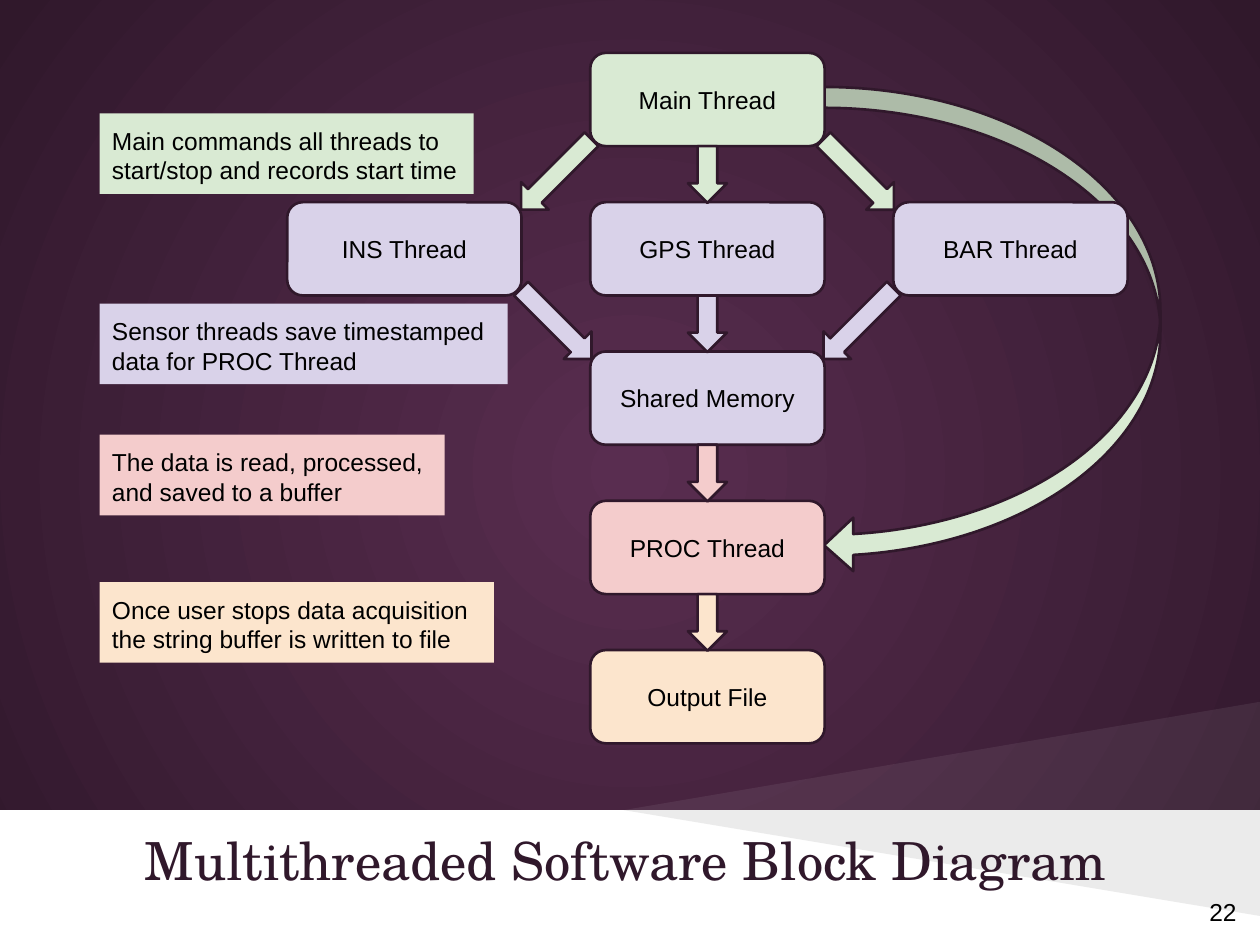
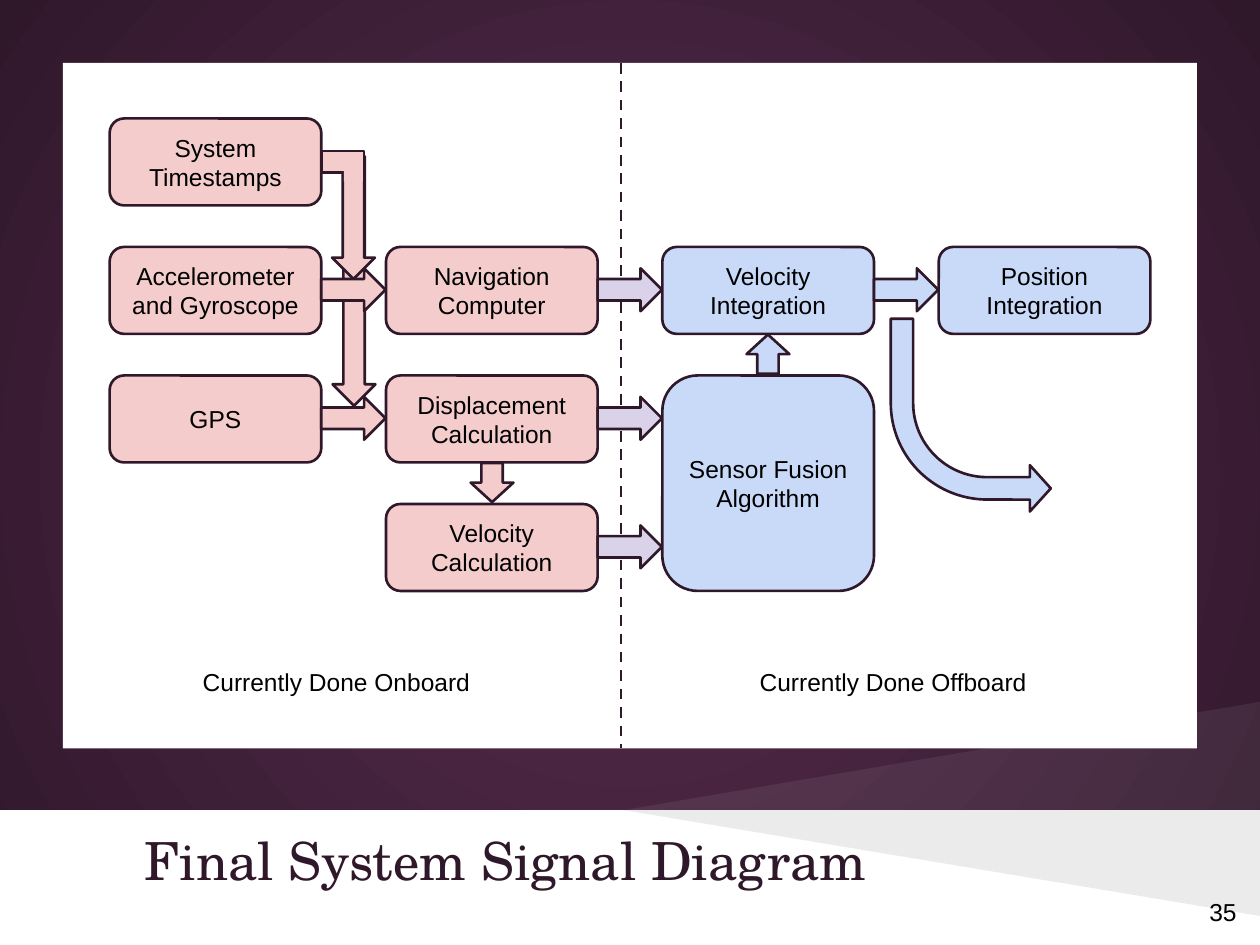
"""Build two slides with the software and signal block diagrams."""
from lxml import etree
from pptx import Presentation
from pptx import util as u
from pptx.dml.color import RGBColor
from pptx.enum import dml, shapes, text
from pptx.oxml.ns import qn

HUES = {
    "plum": "592D50", "dark": "30182B", "white": "FFFFFF", "black": "000000",
    "green": "D9EAD3", "lilac": "D9D2E9", "pink": "F4CCCC",
    "peach": "FCE5CD", "blue": "C9DAF8",
}
KIND = shapes.MSO_SHAPE
ALIGN = text.PP_ALIGN
ANCHOR = text.MSO_ANCHOR
ROUND = [0.167]


def hue(name):
    """Return the named colour."""
    return RGBColor.from_string(HUES[name])


def write(shape, words, size=14, font="Arial", ink="black",
          align=ALIGN.LEFT, anchor=ANCHOR.TOP):
    """Put one styled paragraph into a shape and return it."""
    frame = shape.text_frame
    frame.word_wrap = True
    frame.vertical_anchor = anchor
    frame.margin_left = frame.margin_right = u.Inches(0.1)
    frame.margin_top = frame.margin_bottom = u.Inches(0.1)
    para = frame.paragraphs[0]
    para.text = words
    para.alignment = align
    para.font.size = u.Pt(size)
    para.font.name = font
    para.font.color.rgb = hue(ink)
    return para


def label(slide, area, words, **style):
    """Add a text box."""
    box = slide.shapes.add_textbox(*map(u.Inches, area))
    return write(box, words, **style)


def draw(slide, kind, area, fill, edge=True, turn=0, adj=()):
    """Add a flat preset shape, outlined if asked."""
    shape = slide.shapes.add_shape(kind, *map(u.Inches, area))
    shape.shadow.inherit = False
    shape.fill.solid()
    shape.fill.fore_color.rgb = hue(fill)
    shape.rotation = turn
    for i, value in enumerate(adj):
        shape.adjustments[i] = value
    if edge:
        shape.line.color.rgb = hue("dark")
        shape.line.width = u.Pt(1.5)
    else:
        shape.line.fill.background()
    return shape


def block(slide, area, words, fill):
    """Add a rounded block with centred text."""
    shape = draw(slide, KIND.ROUNDED_RECTANGLE, area, fill, adj=ROUND)
    write(shape, words, align=ALIGN.CENTER, anchor=ANCHOR.MIDDLE)


def note(slide, top, width, words, fill):
    """Add a plain coloured note at the left."""
    shape = draw(slide, KIND.RECTANGLE, (0.79, top, width, 0.64), fill, edge=False)
    write(shape, words)


def down(slide, left, top, high, fill, turn=0):
    """Add a down arrow."""
    draw(slide, KIND.DOWN_ARROW, (left, top, 0.31, high), fill, turn=turn)


def right(slide, left, top, fill, wide=0.51, turn=0):
    """Add a right arrow."""
    draw(slide, KIND.RIGHT_ARROW, (left, top, wide, 0.34), fill, turn=turn)


def wedge(slide, tip, fill, alpha):
    """Add a see-through triangle that opens to the right edge."""
    pts = [(u.Inches(x), u.Inches(y)) for x, y in ((4.95, 6.43), (10, tip), (10, 6.43))]
    path = slide.shapes.build_freeform(*pts[0])
    path.add_line_segments(pts[1:], close=True)
    shape = path.convert_to_shape()
    shape.shadow.inherit = False
    shape.fill.solid()
    shape.fill.fore_color.rgb = hue(fill)
    shape.line.fill.background()
    tint = shape.element.spPr.find(f"{qn('a:solidFill')}/{qn('a:srgbClr')}")
    etree.SubElement(tint, qn("a:alpha")).set("val", str(alpha * 1000))


def glow(slide):
    """Fill the background with a round gradient."""
    fill = slide.background.fill
    fill.gradient()
    for stop, name in zip(fill.gradient_stops, ("plum", "dark")):
        stop.color.rgb = hue(name)
    line = slide.element.find(f".//{qn('a:lin')}")
    ring = etree.Element(qn("a:path"), {"path": "circle"})
    mid = dict.fromkeys("ltrb", "50000")
    etree.SubElement(ring, qn("a:fillToRect"), mid)
    line.getparent().replace(line, ring)


def start(deck, title, page):
    """Add a slide with backdrop, title band and page number."""
    slide = deck.slides.add_slide(deck.slide_layouts[6])
    glow(slide)
    draw(slide, KIND.RECTANGLE, (0, 6.43, 10, 1.07), "white", edge=False)
    wedge(slide, 5.57, "white", 7)
    wedge(slide, 7.27, "black", 8)
    para = label(slide, (0.5, 6.45, 9, 0.74), title, size=30,
                 font="TeX Gyre Schola", ink="dark", anchor=ANCHOR.MIDDLE)
    props = para._p.get_or_add_pPr()
    props.set("marL", str(u.Inches(0.38)))
    props.set("indent", str(u.Inches(0.17)))
    label(slide, (9.5, 7.02, 0.44, 0.45), page)
    return slide


def threads(deck):
    """Build the thread diagram."""
    slide = start(deck, "Multithreaded Software Block Diagram", "22")
    draw(slide, KIND.CURVED_LEFT_ARROW, (6.54, 0.69, 2.67, 3.85), "green",
         adj=(0.062, 0.159, 0.087))
    step = 4.74 / 4
    for col, row, words, fill in (
        (1, 2, "Shared Memory", "lilac"),
        (0, 1, "INS Thread", "lilac"),
        (1, 1, "GPS Thread", "lilac"),
        (2, 1, "BAR Thread", "lilac"),
        (1, 0, "Main Thread", "green"),
        (1, 3, "PROC Thread", "pink"),
        (1, 4, "Output File", "peach"),
    ):
        area = (2.28 + col * 4.81 / 2, 0.42 + row * step, 1.86, 0.74)
        block(slide, area, words, fill)
    for row, fill in enumerate(("green", "lilac", "pink", "peach")):
        down(slide, 5.46, 1.16 + row * step, 0.45, fill)
    for row, fill, turn in ((0, "green", 45), (1, "lilac", 315)):
        top = 0.99 + row * step
        down(slide, 4.26, top, 0.79, fill, turn)
        down(slide, 6.66, top, 0.79, fill, 360 - turn)
    for top, width, words, fill in (
        (0.9, 2.97, "Main commands all threads to start/stop and records start time", "green"),
        (2.41, 3.24, "Sensor threads save timestamped data for PROC Thread", "lilac"),
        (3.45, 2.74, "The data is read, processed, and saved to a buffer", "pink"),
        (4.62, 3.13, "Once user stops data acquisition the string buffer is written to file", "peach"),
    ):
        note(slide, top, width, words, fill)


def divide(slide, left, top, end):
    """Add a dashed upright line."""
    ends = map(u.Inches, (left, top, left, end))
    line = slide.shapes.add_connector(shapes.MSO_CONNECTOR.STRAIGHT, *ends)
    line.line.color.rgb = hue("dark")
    line.line.width = u.Pt(1.5)
    line.line.dash_style = dml.MSO_LINE.DASH
    etree.SubElement(line.element.spPr, qn("a:effectLst"))


def signals(deck):
    """Build the signal diagram."""
    slide = start(deck, "Final System Signal Diagram", "35")
    draw(slide, KIND.RECTANGLE, (0.5, 0.5, 9, 5.44), "white", edge=False)
    right(slide, 1.82, 2.06, "pink", wide=1.98, turn=90)
    gap, step = 6.58 / 3, 1.02
    for col, row, words, fill, high in (
        (0, 0, "System Timestamps", "pink", 0.69),
        (0, 1, "Accelerometer and Gyroscope", "pink", 0.69),
        (1, 1, "Navigation Computer", "pink", 0.69),
        (2, 1, "Velocity Integration", "blue", 0.69),
        (3, 1, "Position Integration", "blue", 0.69),
        (0, 2, "GPS", "pink", 0.69),
        (1, 2, "Displacement Calculation", "pink", 0.69),
        (1, 3, "Velocity Calculation", "pink", 0.69),
        (2, 2, "Sensor Fusion Algorithm", "blue", 1.71),
    ):
        block(slide, (0.87 + col * gap, 0.94 + row * step, 1.68, high), words, fill)
    right(slide, 3.75, 3.66, "pink", wide=0.31, turn=90)
    right(slide, 5.94, 2.64, "blue", wide=0.31, turn=270)
    bend = draw(slide, KIND.BENT_ARROW, (7.07, 2.53, 1.27, 1.53), "blue",
                turn=180, adj=(0.14, 0.145, 0.131, 0.603))
    bend.element.spPr.find(qn("a:xfrm")).set("flipH", "1")
    label(slide, (1.51, 5.19, 2.42, 0.5), "Currently Done Onboard")
    label(slide, (5.93, 5.19, 2.42, 0.5), "Currently Done Offboard")
    divide(slide, 4.93, 0.5, 5.94)
    for col, row, fill in (
        (0, 1, "pink"), (2, 1, "blue"), (0, 2, "pink"),
        (1, 1, "lilac"), (1, 2, "lilac"), (1, 3, "lilac"),
    ):
        right(slide, 2.55 + col * gap, 1.11 + row * step, fill)
    right(slide, 2.32, 1.56, "pink", wide=0.97, turn=90)
    draw(slide, KIND.RECTANGLE, (2.55, 1.2, 0.34, 0.17), "pink")
    draw(slide, KIND.RECTANGLE, (2.73, 1.27, 0.15, 0.17), "pink", edge=False)


def main():
    """Build and save the deck."""
    deck = Presentation()
    deck.slide_width, deck.slide_height = u.Inches(10), u.Inches(7.5)
    threads(deck)
    signals(deck)
    deck.save("out.pptx")


if __name__ == "__main__":
    main()
